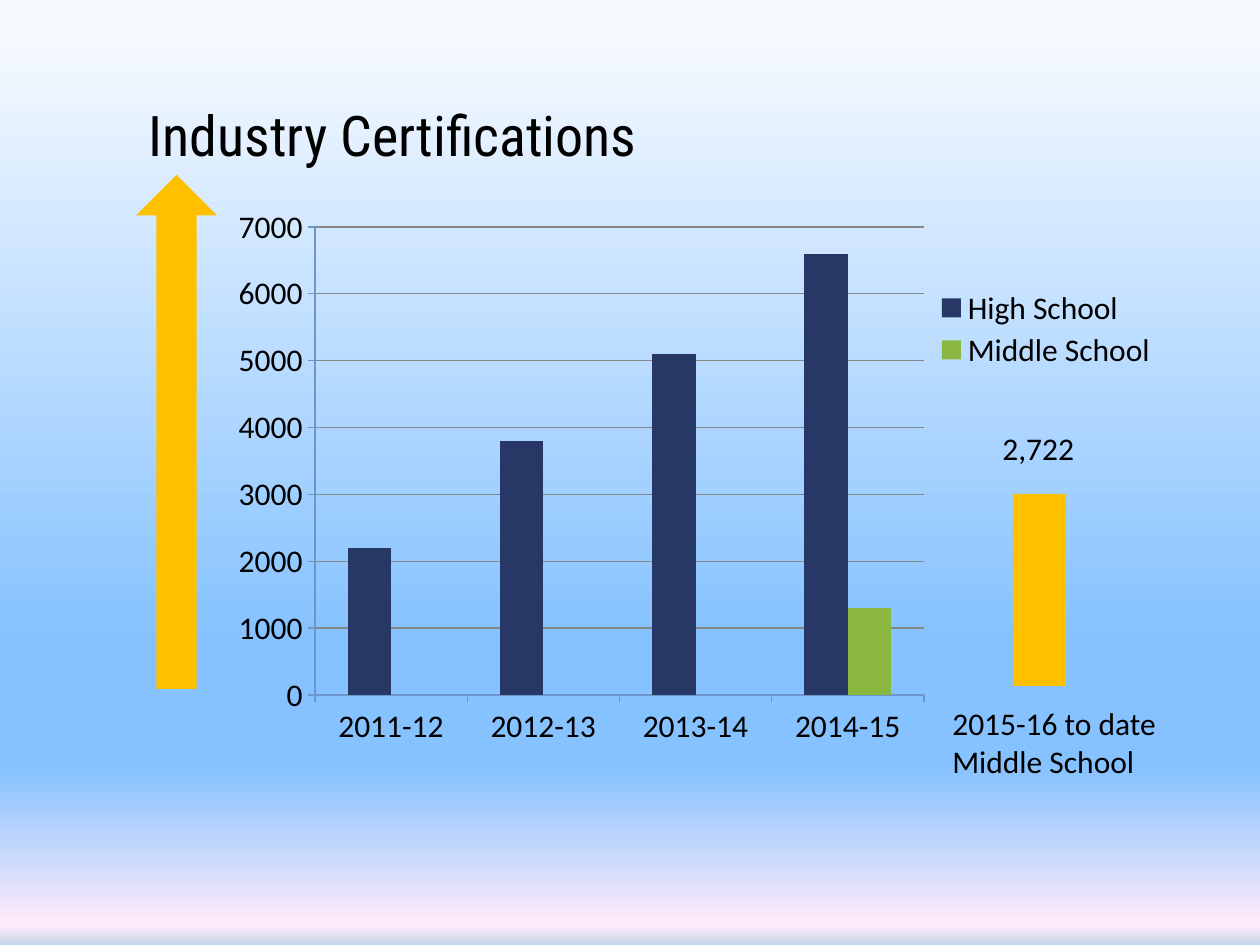
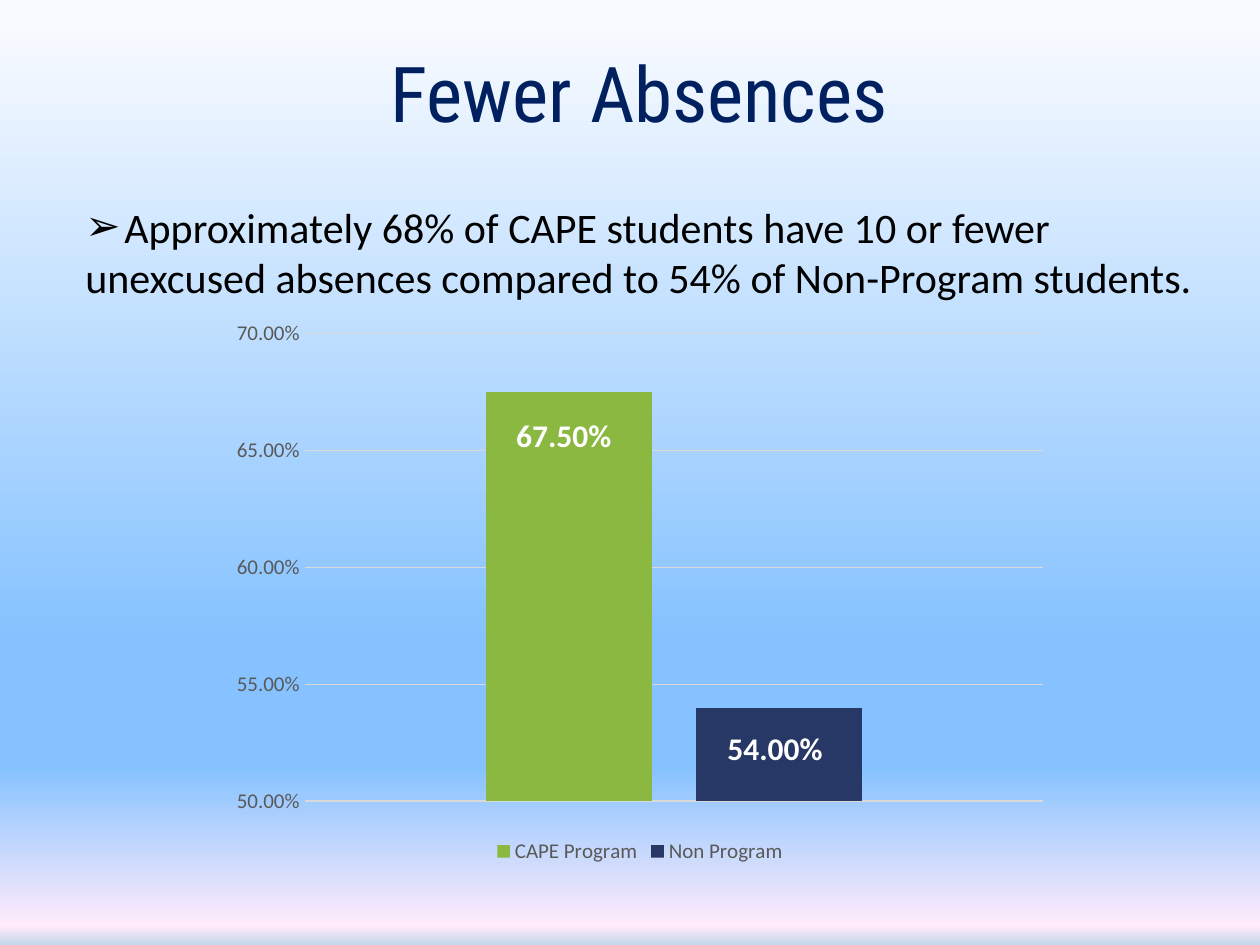
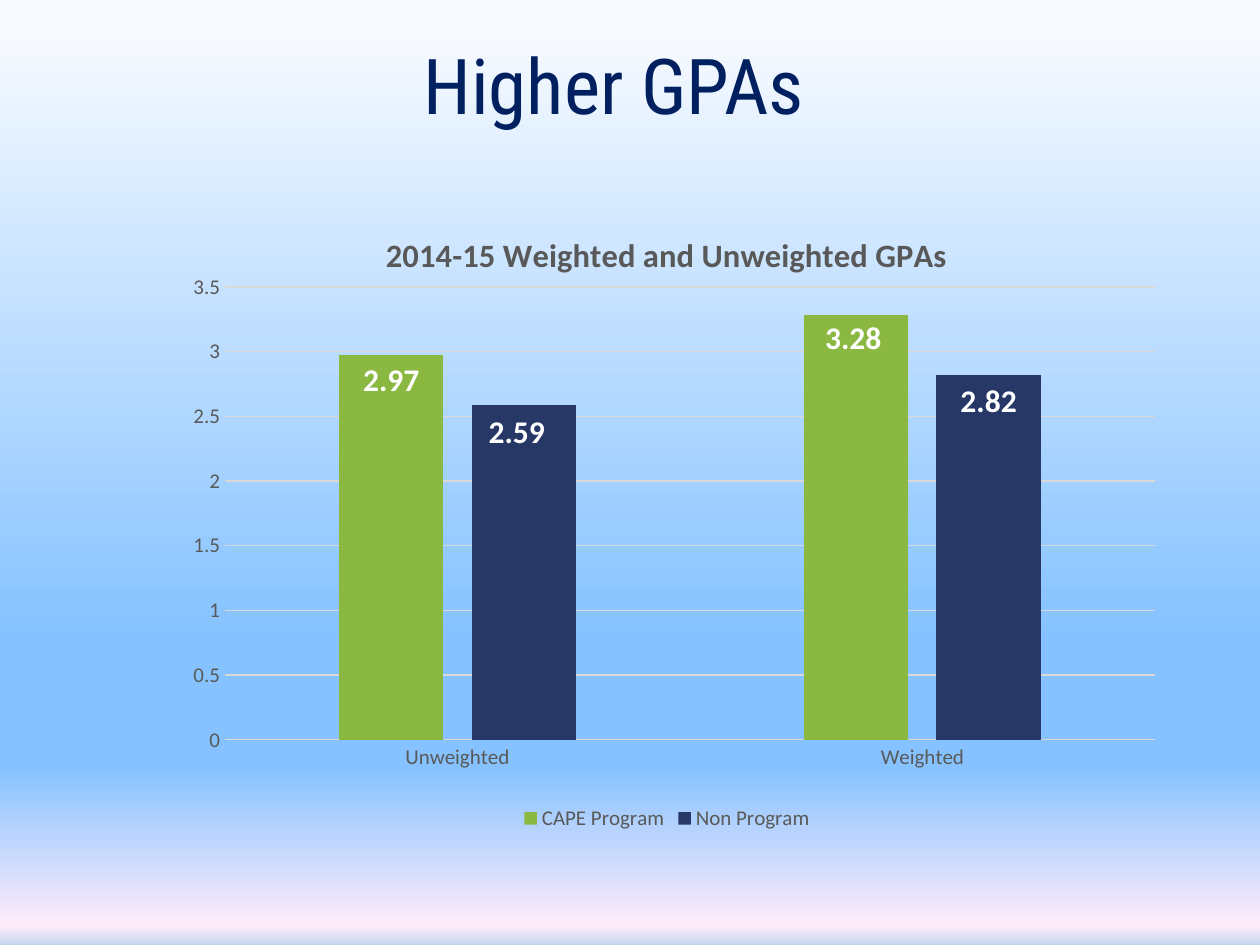
from dataclasses import dataclass

from lxml.etree import SubElement
from pptx import Presentation
from pptx.chart.data import CategoryChartData
from pptx.dml.color import RGBColor
from pptx.enum.chart import XL_CHART_TYPE, XL_LABEL_POSITION, XL_LEGEND_POSITION, XL_TICK_MARK
from pptx.enum.shapes import MSO_SHAPE
from pptx.enum.text import MSO_ANCHOR, MSO_AUTO_SIZE, PP_ALIGN
from pptx.oxml.ns import qn
from pptx.util import Pt

EMU_PER_PIXEL = 914400 / 126


@dataclass(frozen=True)
class Theme:
    title_font: str = "Roboto Condensed"
    body_font: str = "Calibri"
    bullet_font: str = "Arial"
    black: str = "000000"
    white: str = "FFFFFF"
    title_navy: str = "002060"
    navy: str = "273867"
    green: str = "8AB840"
    amber: str = "FFC000"
    grey: str = "595959"
    pale_line: str = "D9D9D9"
    dark_line: str = "878787"
    axis_blue: str = "6A96CC"
    title_size: int = 44
    small_title_size: int = 32
    body_size: int = 24
    chart_title_size: float = 18.6
    label_size: int = 18
    axis_size: int = 12
    background: tuple = (
        (3, "F7FAFF"), (68, "85C2FF"), (81, "85C2FF"), (98, "FFEBFA"), (100, "C4D6EB"),
    )


THEME = Theme()


def px(value):
    return round(value * EMU_PER_PIXEL)


def box(*lengths):
    return [px(length) for length in lengths]


def style_font(font, size, color, name=THEME.body_font, bold=False):
    font.size = Pt(size)
    font.name = name
    font.bold = bold
    font.color.rgb = RGBColor.from_string(color)


def style_line(line, color):
    line.color.rgb = RGBColor.from_string(color)
    line.width = Pt(0.75)


def set_background(master):
    fill = master.background.fill
    fill.gradient()
    fill.gradient_angle = 270
    stops = master.element.find(".//" + qn("a:gsLst"))
    for stop in list(stops):
        stops.remove(stop)
    for percent, color in THEME.background:
        stop = SubElement(stops, qn("a:gs"), pos=str(percent * 1000))
        SubElement(stop, qn("a:srgbClr"), val=color)


def add_titled_slide(presentation, text, bounds, size=THEME.title_size, color=THEME.title_navy):
    slide = presentation.slides.add_slide(presentation.slide_layouts[5])
    title = slide.shapes.title
    title.left, title.top, title.width, title.height = box(*bounds)
    frame = title.text_frame
    frame.auto_size = MSO_AUTO_SIZE.NONE
    frame.vertical_anchor = MSO_ANCHOR.TOP
    paragraph = frame.paragraphs[0]
    paragraph.alignment = PP_ALIGN.LEFT
    run = paragraph.add_run()
    run.text = text
    style_font(run.font, size, color, THEME.title_font)
    return slide


def add_text(slide, bounds, lines, size=THEME.label_size, wrap=True):
    frame = slide.shapes.add_textbox(*box(*bounds)).text_frame
    frame.word_wrap = wrap
    for index, line in enumerate(lines):
        paragraph = frame.add_paragraph() if index else frame.paragraphs[0]
        run = paragraph.add_run()
        run.text = line
        style_font(run.font, size, THEME.black)
    return frame


def add_arrow_bullet(paragraph, indent):
    properties = paragraph._p.get_or_add_pPr()
    properties.set("marL", str(px(indent)))
    properties.set("indent", str(-px(indent)))
    SubElement(properties, qn("a:buFont"), typeface=THEME.bullet_font)
    SubElement(properties, qn("a:buChar"), char="➢")


def add_amber_shape(slide, kind, bounds):
    shape = slide.shapes.add_shape(kind, *box(*bounds))
    shape.shadow.inherit = False
    shape.fill.solid()
    shape.fill.fore_color.rgb = RGBColor.from_string(THEME.amber)
    shape.line.fill.background()


def set_layout(parent, position, chart_bounds, lengths, target=None, fixed=True):
    existing = parent.find(qn("c:layout"))
    if existing is not None:
        parent.remove(existing)
    layout = SubElement(parent, qn("c:layout"))
    parent.insert(position, layout)
    manual = SubElement(layout, qn("c:manualLayout"))
    if target:
        SubElement(manual, qn("c:layoutTarget"), val=target)
    if fixed:
        for name in ("c:xMode", "c:yMode"):
            SubElement(manual, qn(name), val="edge")
    _, _, width, height = chart_bounds
    for name, length, whole in zip("xywh", lengths, (width, height) * 2):
        SubElement(manual, qn(f"c:{name}"), val=str(round(length / whole, 4)))


def set_plot_area(chart, chart_bounds, lengths):
    plot_area = chart.element.find(".//" + qn("c:plotArea"))
    set_layout(plot_area, 0, chart_bounds, lengths, target="inner")


def add_column_chart(slide, bounds, categories, series, gap, overlap, number_format="General"):
    data = CategoryChartData(number_format=number_format)
    data.categories = categories
    for name, values, _ in series:
        data.add_series(name, values)
    chart = slide.shapes.add_chart(XL_CHART_TYPE.COLUMN_CLUSTERED, *box(*bounds), data).chart
    chart.has_title = False
    plot = chart.plots[0]
    plot.vary_by_categories = False
    plot.gap_width = gap
    plot.overlap = overlap
    for column, (_, _, color) in zip(plot.series, series):
        column.format.fill.solid()
        column.format.fill.fore_color.rgb = RGBColor.from_string(color)
        column.invert_if_negative = False
    return chart


def style_chart(chart, size, color, grid_color, tick, legend_position):
    style_font(chart.font, size, color)
    for axis in (chart.category_axis, chart.value_axis):
        axis.major_tick_mark = tick
        axis.minor_tick_mark = XL_TICK_MARK.NONE
        style_font(axis.tick_labels.font, size, color)
    chart.value_axis.has_major_gridlines = True
    style_line(chart.value_axis.major_gridlines.format.line, grid_color)
    chart.has_legend = True
    chart.legend.position = legend_position
    chart.legend.include_in_layout = False
    style_font(chart.legend.font, size, color)


def add_column_labels(chart, bounds, shifts):
    for series in chart.plots[0].series:
        for index in range(len(series.values)):
            label = series.points[index].data_label
            style_font(label.font, THEME.label_size, THEME.white, bold=True)
            label.position = XL_LABEL_POSITION.INSIDE_END
    for label, shift in zip(chart.element.iter(qn("c:dLbl")), shifts):
        set_layout(label, 1, bounds, shift, fixed=False)
    for labels in chart.element.iter(qn("c:dLbls")):
        leader = labels.find(qn("c:showLeaderLines"))
        if leader is None:
            leader = SubElement(labels, qn("c:showLeaderLines"))
        leader.set("val", "0")


def add_program_chart(slide, bounds, categories, cape, non_program, shifts, number_format="General"):
    series = (("CAPE Program", cape, THEME.green), ("Non Program", non_program, THEME.navy))
    chart = add_column_chart(slide, bounds, categories, series, 219, -27, number_format)
    style_chart(chart, THEME.axis_size, THEME.grey, THEME.pale_line,
                XL_TICK_MARK.NONE, XL_LEGEND_POSITION.BOTTOM)
    style_line(chart.category_axis.format.line, THEME.pale_line)
    chart.value_axis.format.line.fill.background()
    chart.value_axis.tick_labels.number_format = number_format
    chart.value_axis.tick_labels.number_format_is_linked = False
    add_column_labels(chart, bounds, shifts)
    return chart


def add_chart_title(chart, text, chart_bounds, corner):
    chart.has_title = True
    title = chart.chart_title
    run = title.text_frame.paragraphs[0].add_run()
    run.text = text
    style_font(run.font, THEME.chart_title_size, THEME.grey, bold=True)
    set_layout(title._element, 1, chart_bounds, corner)


def build_certifications(presentation):
    slide = add_titled_slide(presentation, "Industry Certifications", (136, 94, 651, 81),
                             THEME.small_title_size, THEME.black)
    add_text(slide, (940, 698, 251, 89), ("2015-16 to date", "Middle School"))
    add_amber_shape(slide, MSO_SHAPE.UP_ARROW, (136, 175, 81, 514))
    bounds = (220, 198, 969, 559)
    chart = add_column_chart(
        slide, bounds, ("2011-12", "2012-13", "2013-14", "2014-15"),
        (("High School", (2200, 3800, 5100, 6600), THEME.navy),
         ("Middle School", (None, None, None, 1300), THEME.green)),
        gap=150, overlap=0)
    style_chart(chart, THEME.label_size, THEME.black, THEME.dark_line,
                XL_TICK_MARK.OUTSIDE, XL_LEGEND_POSITION.RIGHT)
    for axis in (chart.category_axis, chart.value_axis):
        style_line(axis.format.line, THEME.axis_blue)
    set_plot_area(chart, bounds, (95, 29, 609, 468))
    set_layout(chart.legend._element, 1, bounds, (706, 87, 240, 88))
    add_amber_shape(slide, MSO_SHAPE.RECTANGLE, (1013, 494, 53, 192))
    add_text(slide, (990, 423, 98, 50), ("2,722",), wrap=False)


def build_absences(presentation):
    slide = add_titled_slide(presentation, "Fewer Absences", (378, 39, 882, 106))
    frame = add_text(slide, (73, 195, 1187, 115),
                     ("Approximately 68% of CAPE students have 10 or fewer",
                      "unexcused absences compared to 54% of Non-Program students."),
                     THEME.body_size)
    add_arrow_bullet(frame.paragraphs[0], 39)
    chart = add_program_chart(slide, (220, 310, 840, 559), ("1",), (0.675,), (0.54,),
                              ((-5, 20), (-4, 18)), "0.00%")
    chart.category_axis.visible = False
    chart.value_axis.minimum_scale = 0.5
    chart.value_axis.maximum_scale = 0.7
    chart.value_axis.major_unit = 0.05


def build_grades(presentation):
    slide = add_titled_slide(presentation, "Higher GPAs", (411, 31, 848, 106))
    bounds = (168, 210, 998, 626)
    chart = add_program_chart(slide, bounds, ("Unweighted", "Weighted"),
                              (2.97, 3.28), (2.59, 2.82),
                              ((0, 1), (-3, -1), (-7, 4), (0, 2)))
    add_chart_title(chart, "2014-15 Weighted and Unweighted GPAs", bounds, (212, 16))
    set_plot_area(chart, bounds, (57, 77, 930, 453))


def main():
    presentation = Presentation()
    presentation.slide_width, presentation.slide_height = box(1260, 945)
    set_background(presentation.slide_master)
    build_certifications(presentation)
    build_absences(presentation)
    build_grades(presentation)
    presentation.save("out.pptx")


if __name__ == "__main__":
    main()
